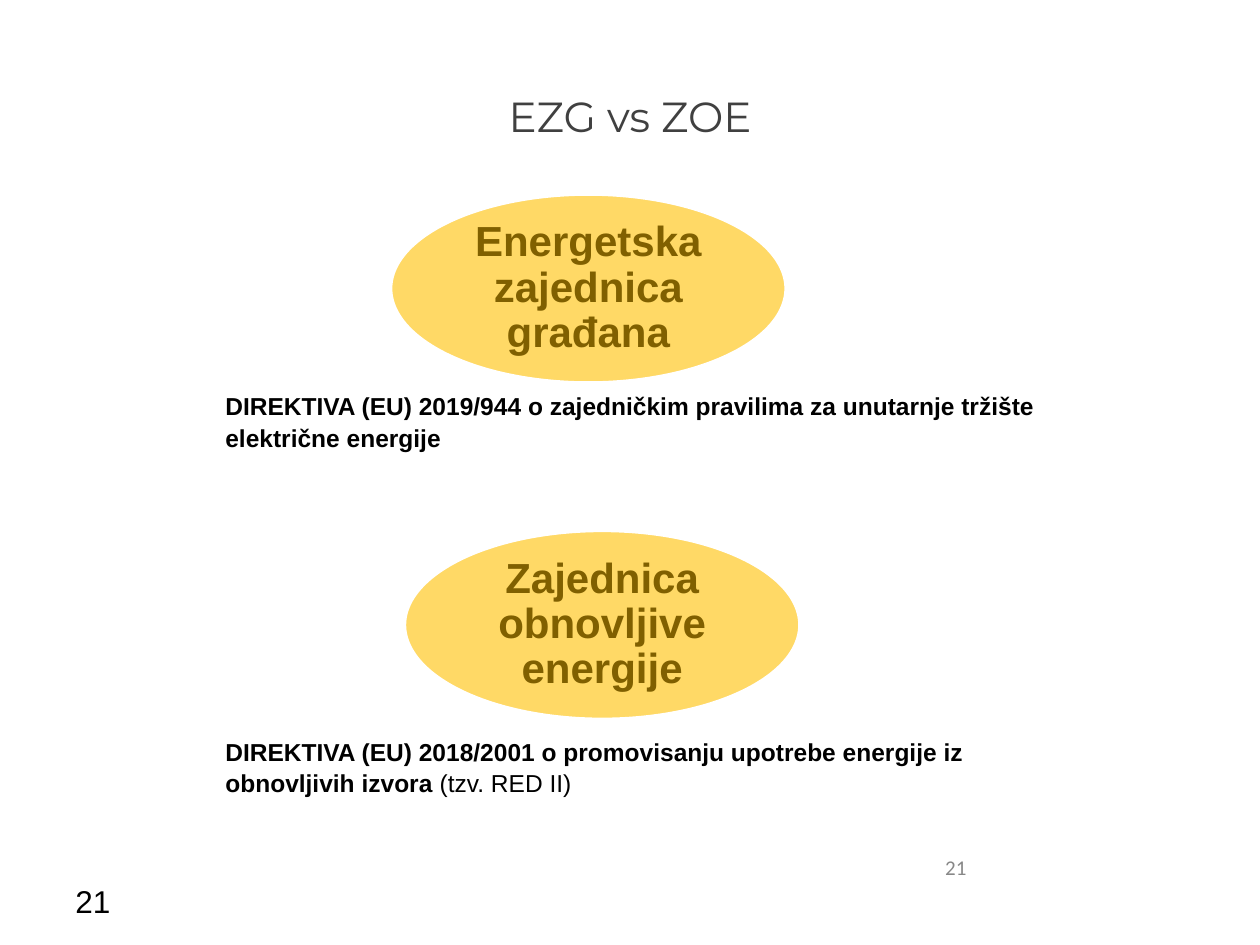
from pptx import Presentation
from pptx.dml.color import RGBColor
from pptx.enum.shapes import MSO_SHAPE
from pptx.enum.text import MSO_ANCHOR, PP_ALIGN
from pptx.util import Pt

COLORS = {
    "title": "404040",
    "ellipse": "FFD966",
    "outline": "FFFFFF",
    "ellipse_text": "806000",
    "body": "000000",
    "page_number": "888888",
}
TITLE = "EZG vs ZOE"
PAGE_NUMBER = "21"
ELLIPSE_SIZE = (226, 108)
DIRECTIVE_LEFT, DIRECTIVE_HEIGHT = 121.7, 42.5

# Each community: name, ellipse position, directive top and width, (text, bold) runs
COMMUNITIES = [
    ("Energetska zajednica građana", (223.2, 110.9), 218.9, 493.2,
     [("DIREKTIVA (EU) 2019/944 o zajedničkim pravilima za unutarnje tržište "
       "električne energije", True)]),
    ("Zajednica obnovljive energije", (231.1, 303.1), 416.2, 481.7,
     [("DIREKTIVA (EU) 2018/2001 o promovisanju upotrebe energije iz "
       "obnovljivih izvora", True),
      ("\u00a0(tzv. RED II)", False)]),
]

# Each page number: box, alignment, anchor, font, size, colour
PAGE_NUMBERS = [
    ((36, 500.4, 168, 28.8), PP_ALIGN.LEFT, MSO_ANCHOR.TOP, "Arial", 18, "body"),
    ((343.4, 481, 216, 28.8), PP_ALIGN.RIGHT, MSO_ANCHOR.MIDDLE, "Calibri", 12, "page_number"),
]


def rgb(name):
    return RGBColor.from_string(COLORS[name])


def format_run(run, font, size, color, bold=False):
    run.font.name = font
    run.font.size = Pt(size)
    run.font.bold = bold
    run.font.color.rgb = rgb(color)


def add_text_box(slide, box):
    text_frame = slide.shapes.add_textbox(*map(Pt, box)).text_frame
    text_frame.word_wrap = True
    return text_frame


def add_title(slide):
    title = slide.shapes.title
    title.left, title.top, title.width, title.height = map(Pt, (36, 48.2, 648, 62.6))
    text_frame = title.text_frame
    text_frame.text = TITLE
    text_frame.vertical_anchor = MSO_ANCHOR.TOP
    paragraph = text_frame.paragraphs[0]
    paragraph.alignment = PP_ALIGN.CENTER
    format_run(paragraph.runs[0], "Montserrat", 24, "title")


def add_ellipse(slide, name, position):
    shape = slide.shapes.add_shape(MSO_SHAPE.OVAL, *map(Pt, position + ELLIPSE_SIZE))
    shape.shadow.inherit = False
    shape.fill.solid()
    shape.fill.fore_color.rgb = rgb("ellipse")
    shape.line.color.rgb = rgb("outline")
    shape.line.width = Pt(2)
    text_frame = shape.text_frame
    text_frame.word_wrap = True
    text_frame.vertical_anchor = MSO_ANCHOR.MIDDLE
    text_frame.margin_left = text_frame.margin_right = Pt(1.5)
    text_frame.margin_top = text_frame.margin_bottom = Pt(1.5)
    text_frame.text = name
    paragraph = text_frame.paragraphs[0]
    paragraph.alignment = PP_ALIGN.CENTER
    paragraph.line_spacing = 0.9
    format_run(paragraph.runs[0], "Arial", 24, "ellipse_text", bold=True)


def add_directive(slide, top, width, runs):
    text_frame = add_text_box(slide, (DIRECTIVE_LEFT, top, width, DIRECTIVE_HEIGHT))
    paragraph = text_frame.paragraphs[0]
    paragraph.line_spacing = 1.07
    paragraph.space_after = Pt(8)
    for text, bold in runs:
        run = paragraph.add_run()
        run.text = text
        format_run(run, "Arial", 14, "body", bold)


def add_page_number(slide, box, alignment, anchor, font, size, color):
    text_frame = add_text_box(slide, box)
    text_frame.text = PAGE_NUMBER
    text_frame.vertical_anchor = anchor
    paragraph = text_frame.paragraphs[0]
    paragraph.alignment = alignment
    format_run(paragraph.runs[0], font, size, color)


def main():
    presentation = Presentation()
    presentation.slide_width, presentation.slide_height = Pt(720), Pt(540)
    slide = presentation.slides.add_slide(presentation.slide_layouts[5])
    add_title(slide)
    for page_number in PAGE_NUMBERS:
        add_page_number(slide, *page_number)
    for name, position, top, width, runs in COMMUNITIES:
        add_ellipse(slide, name, position)
        add_directive(slide, top, width, runs)
    presentation.save("out.pptx")


if __name__ == "__main__":
    main()
